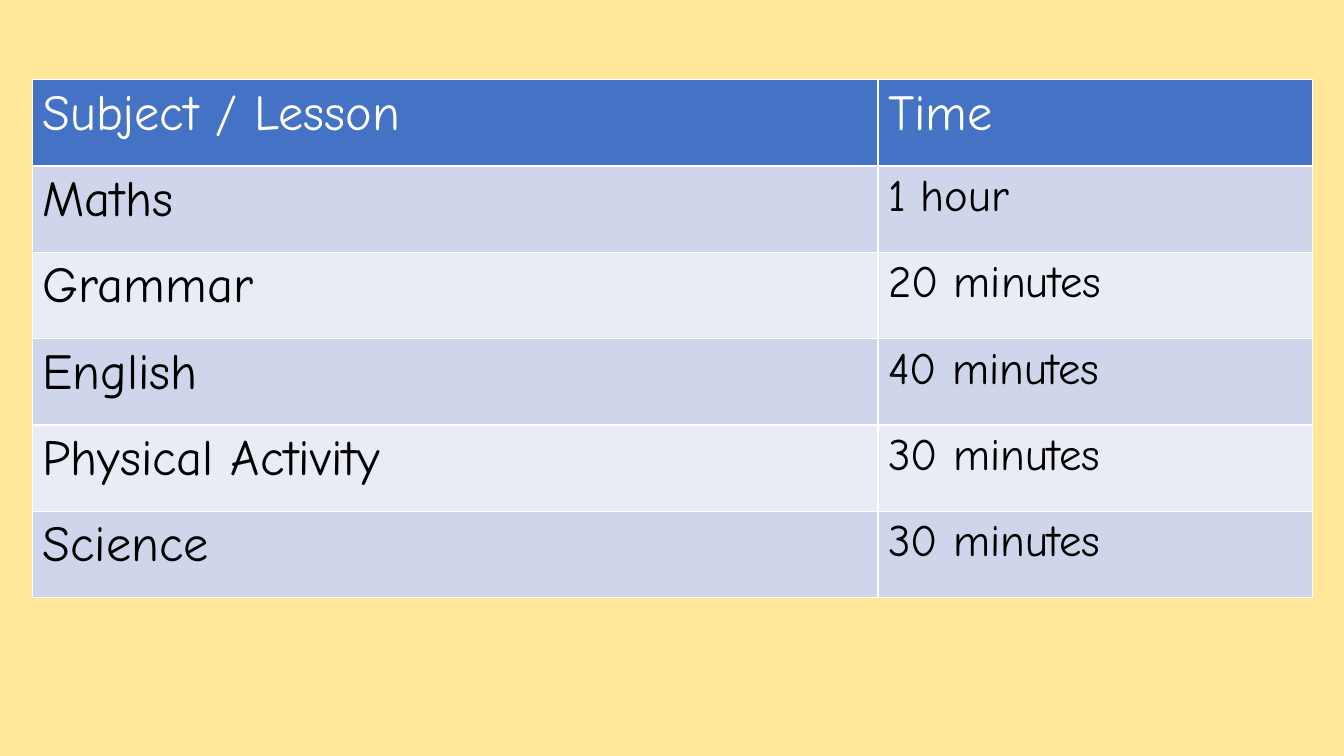
from pptx import Presentation
from pptx.dml.color import RGBColor
from pptx.util import Pt

FONT = "Comic Neue"
BACKGROUND = RGBColor(0xFF, 0xE6, 0x99)
HEADER_FILL = RGBColor(0x44, 0x72, 0xC4)
BAND_FILLS = [RGBColor(0xE9, 0xEB, 0xF5), RGBColor(0xCF, 0xD5, 0xEA)]
WHITE = RGBColor(0xFF, 0xFF, 0xFF)
BLACK = RGBColor(0x00, 0x00, 0x00)

COLUMN_WIDTHS = [604, 310.4]
ROW_HEIGHT = 61.7
TIMETABLE = [
    ("Subject / Lesson", "Time"),
    ("Maths", "1 hour"),
    ("Grammar", "20 minutes"),
    ("English", "40 minutes"),
    ("Physical Activity", "30 minutes"),
    ("Science", "30 minutes"),
]


def write_cell(cell, text, size, color, fill):
    cell.fill.solid()
    cell.fill.fore_color.rgb = fill
    run = cell.text_frame.paragraphs[0].add_run()
    run.text = text
    run.font.name = FONT
    run.font.size = Pt(size)
    run.font.bold = False
    run.font.color.rgb = color


# Slide and background
presentation = Presentation()
presentation.slide_width = Pt(960)
presentation.slide_height = Pt(540)
slide = presentation.slides.add_slide(presentation.slide_layouts[6])
slide.background.fill.solid()
slide.background.fill.fore_color.rgb = BACKGROUND

# Timetable; the default table style supplies the white borders
table = slide.shapes.add_table(
    len(TIMETABLE), len(COLUMN_WIDTHS), Pt(23.2), Pt(56.9),
    Pt(sum(COLUMN_WIDTHS)), Pt(ROW_HEIGHT * len(TIMETABLE)),
).table
for column, width in zip(table.columns, COLUMN_WIDTHS):
    column.width = Pt(width)

for row_index, entries in enumerate(TIMETABLE):
    table.rows[row_index].height = Pt(ROW_HEIGHT)
    is_header = row_index == 0
    for column_index, text in enumerate(entries):
        write_cell(
            table.cell(row_index, column_index), text,
            size=36 if is_header or column_index == 0 else 32,
            color=WHITE if is_header else BLACK,
            fill=HEADER_FILL if is_header else BAND_FILLS[row_index % 2],
        )

presentation.save("out.pptx")
